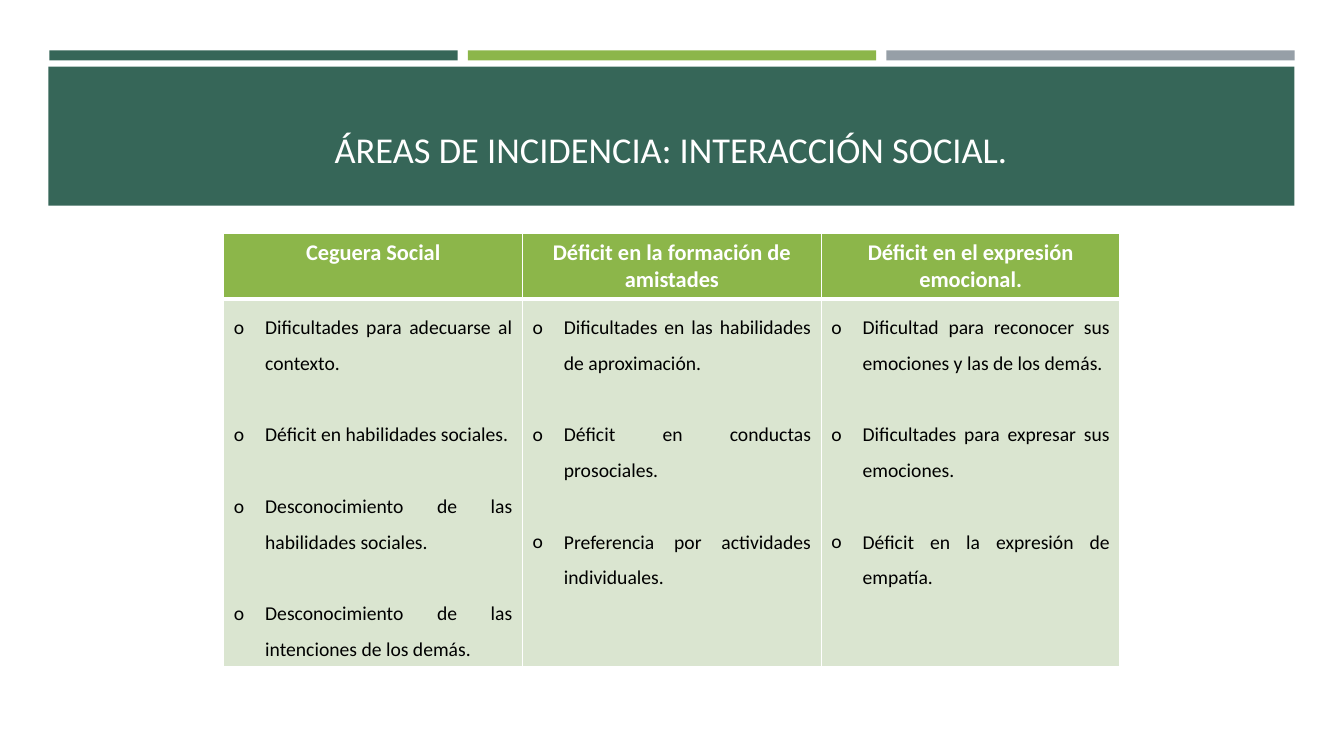
from dataclasses import dataclass

from lxml import etree
from pptx import Presentation
from pptx.dml.color import RGBColor
from pptx.enum import shapes, text
from pptx.oxml import ns
from pptx.util import Inches, Pt


@dataclass(frozen=True)
class Theme:
    font: str = "Calibri"
    dark: str = "366658"
    green: str = "8CB64A"
    gray: str = "969FA7"
    pale: str = "DAE5D0"
    white: str = "FFFFFF"
    black: str = "000000"
    title_size: float = 26
    header_size: float = 16
    body_size: float = 14
    item_gap: float = 25.6
    thin_line: float = 1
    thick_line: float = 3


THEME = Theme()

AREAS = {
    "Ceguera Social": [
        "Dificultades para adecuarse al contexto.",
        "Déficit en habilidades sociales.",
        "Desconocimiento de las habilidades sociales.",
        "Desconocimiento de las intenciones de los demás.",
    ],
    "Déficit en la formación de amistades": [
        "Dificultades en las habilidades de aproximación.",
        "Déficit en conductas prosociales.",
        "Preferencia por actividades individuales.",
    ],
    "Déficit en el expresión emocional.": [
        "Dificultad para reconocer sus emociones y las de los demás.",
        "Dificultades para expresar sus emociones.",
        "Déficit en la expresión de empatía.",
    ],
}


def add_block(page, left, top, width, height, color):
    block = page.shapes.add_shape(
        shapes.MSO_SHAPE.RECTANGLE,
        Inches(left), Inches(top), Inches(width), Inches(height),
    )
    block.shadow.inherit = False
    block.fill.solid()
    block.fill.fore_color.rgb = RGBColor.from_string(color)
    block.line.fill.background()


def format_para(para, size, color, alignment, bold=False):
    para.alignment = alignment
    for span in para.runs:
        span.font.name = THEME.font
        span.font.size = Pt(size)
        span.font.bold = bold
        span.font.color.rgb = RGBColor.from_string(color)


def place_title(page, wording):
    title = page.shapes.title
    title.left, title.top = Inches(0.63), Inches(0.8)
    title.width, title.height = Inches(12.06), Inches(0.94)
    frame = title.text_frame
    frame.text = wording
    frame.word_wrap = True
    frame.auto_size = text.MSO_AUTO_SIZE.NONE
    frame.vertical_anchor = text.MSO_ANCHOR.BOTTOM
    format_para(frame.paragraphs[0], THEME.title_size, THEME.white, text.PP_ALIGN.CENTER)
    title.element.getparent().append(title.element)


def add_bullet(para):
    props = para._p.get_or_add_pPr()
    indent = Inches(0.31)
    props.set("marL", str(indent))
    props.set("indent", str(-indent))
    etree.SubElement(props, ns.qn("a:buFont"), typeface=THEME.font)
    etree.SubElement(props, ns.qn("a:buChar"), char="o")


def style_cell(cell, fill, top_line, bottom_line):
    props = cell._tc.get_or_add_tcPr()
    widths = {
        "lnL": THEME.thin_line,
        "lnR": THEME.thin_line,
        "lnT": top_line,
        "lnB": bottom_line,
    }
    for side, width in widths.items():
        line = etree.SubElement(props, ns.qn(f"a:{side}"), w=str(Pt(width)))
        solid = etree.SubElement(line, ns.qn("a:solidFill"))
        etree.SubElement(solid, ns.qn("a:srgbClr"), val=THEME.white)
    cell.fill.solid()
    cell.fill.fore_color.rgb = RGBColor.from_string(fill)


def fill_header(cell, heading):
    style_cell(cell, THEME.green, THEME.thin_line, THEME.thick_line)
    cell.text_frame.text = heading
    format_para(
        cell.text_frame.paragraphs[0], THEME.header_size, THEME.white,
        text.PP_ALIGN.CENTER, bold=True,
    )


def fill_items(cell, items):
    style_cell(cell, THEME.pale, THEME.thick_line, THEME.thin_line)
    cell.text_frame.text = "\n".join(items)
    for index, para in enumerate(cell.text_frame.paragraphs):
        format_para(para, THEME.body_size, THEME.black, text.PP_ALIGN.JUSTIFY)
        para.line_spacing = 1.5
        para.space_before = Pt(THEME.item_gap if index else 0)
        add_bullet(para)


def add_area_table(page):
    frame = page.shapes.add_table(
        2, len(AREAS), Inches(2.22), Inches(2.32), Inches(8.89), Inches(4.23)
    )
    table = frame.table
    table.rows[0].height = Inches(0.63)
    table.rows[1].height = Inches(3.6)
    for column, (heading, items) in enumerate(AREAS.items()):
        fill_header(table.cell(0, column), heading)
        fill_items(table.cell(1, column), items)


def main():
    deck = Presentation()
    deck.slide_width, deck.slide_height = Inches(13.33), Inches(7.5)
    page = deck.slides.add_slide(deck.slide_layouts.get_by_name("Title Only"))
    for index, color in enumerate((THEME.dark, THEME.green, THEME.gray)):
        add_block(page, 0.49 + 4.15 * index, 0.5, 4.05, 0.1, color)
    add_block(page, 0.48, 0.66, 12.36, 1.38, THEME.dark)
    place_title(page, "ÁREAS DE INCIDENCIA: INTERACCIÓN SOCIAL.")
    add_area_table(page)
    deck.save("out.pptx")


if __name__ == "__main__":
    main()
